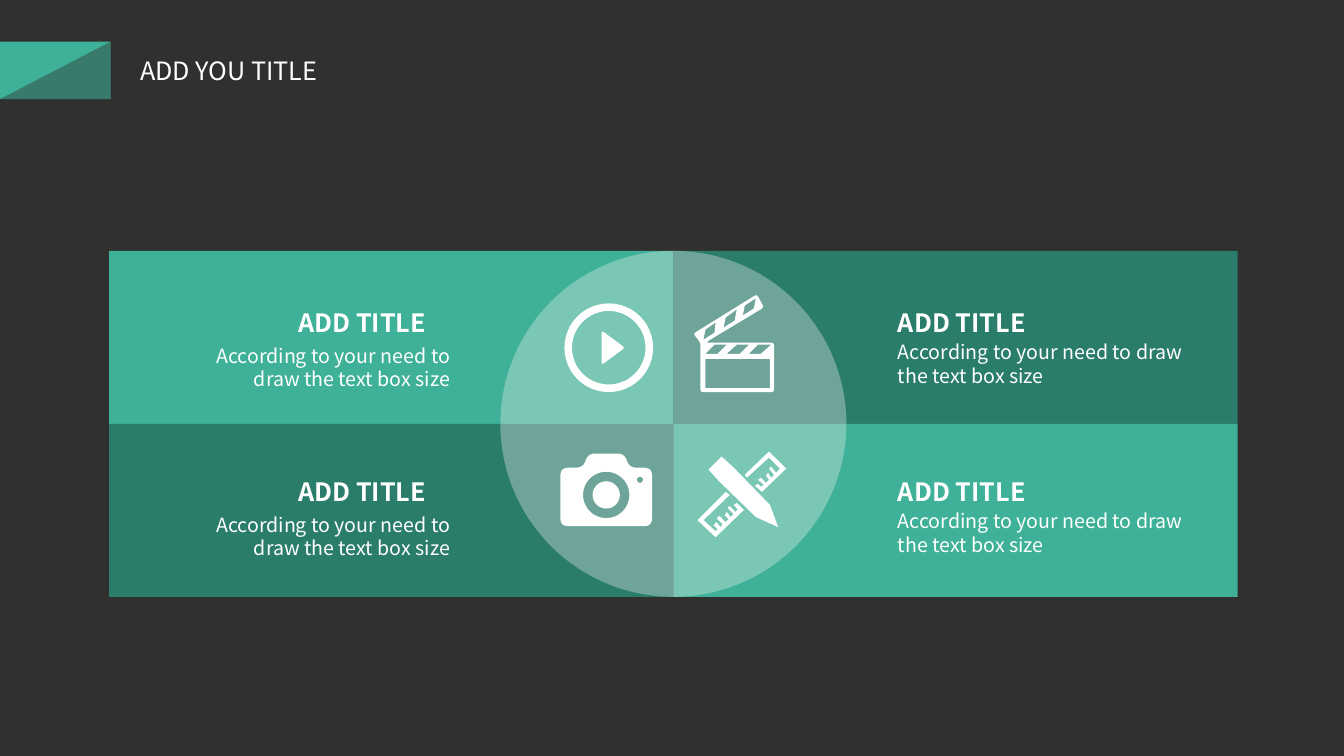
from math import cos, dist, pi, sin

from lxml.etree import SubElement
from pptx import Presentation
from pptx.dml.color import RGBColor
from pptx.enum.shapes import MSO_SHAPE
from pptx.enum.text import PP_ALIGN
from pptx.oxml.ns import qn
from pptx.util import Cm, Pt

DARK = RGBColor(0x30, 0x30, 0x2F)
MINT = RGBColor(0x3E, 0xB1, 0x98)
PINE = RGBColor(0x2B, 0x7D, 0x6B)
MIST = RGBColor(0xF2, 0xF2, 0xF2)
WHITE = RGBColor(0xFF, 0xFF, 0xFF)
FONT = "Noto Sans CJK JP"
ICON_UNIT = 0.0254

PANEL_LEFT, PANEL_TOP = 2.75, 6.32
PANEL_W, PANEL_H = 14.22, 4.36
TEXT_PITCH = 4.26
BODY = "According to your need to draw the text box size"

PLAY = [(597, 328), (620, 345), (597, 362)]
CLAPPER = [(688, 331), (751, 292), (758, 305), (703, 338), (701, 340),
           (768, 340), (768, 389), (695, 389), (695, 340)]
CLAPPER_HOLES = [
    [(743, 342), (734, 351), (721, 351), (731, 342)],
    [(739, 303), (750, 296), (748, 306), (737, 313)],
    [(720, 315), (731, 307), (729, 318), (718, 325)],
    [(698, 337), (700, 327), (710, 320), (709, 330)],
    [(709, 342), (721, 342), (712, 351), (700, 351)],
    [(755, 351), (743, 351), (752, 342), (765, 342)],
    [(700, 356), (764, 356), (764, 385), (700, 385)],
]
CAMERA = [(556, 464), (579, 464), (583, 450), (620, 450), (624, 464),
          (647, 464), (647, 522), (556, 522)]
RULER_TOP = [
    (763, 454), (774, 465), (770, 469), (765, 463), (763, 465), (768, 471),
    (765, 474), (762, 469), (760, 472), (763, 476), (760, 479), (755, 474),
    (752, 476), (758, 481), (755, 483), (752, 480), (749, 482), (756, 488),
    (780, 465), (763, 448), (739, 471), (741, 474)]
RULER_BOTTOM = [
    (728, 501), (732, 505), (730, 508), (724, 502), (722, 504), (728, 510),
    (725, 513), (721, 508), (719, 511), (723, 515), (720, 518), (714, 512),
    (711, 514), (717, 520), (715, 523), (711, 518), (708, 521), (712, 525),
    (710, 527), (698, 516), (724, 491), (720, 488), (692, 516), (710, 533),
    (738, 506), (731, 499)]
PENCIL = [(728, 464), (716, 453), (703, 466), (714, 478), (750, 513),
          (772, 523), (764, 501)]


def paint(sp, color, opacity=None):
    sp.shadow.inherit = False
    sp.fill.solid()
    sp.fill.fore_color.rgb = color
    sp.line.fill.background()
    if opacity is not None:
        clr = sp._element.spPr.find(qn("a:solidFill"))[0]
        SubElement(clr, qn("a:alpha"), val=str(opacity * 1000))


def add_preset(slide, kind, left, top, width, height, color, opacity=None):
    sp = slide.shapes.add_shape(kind, Cm(left), Cm(top), Cm(width), Cm(height))
    paint(sp, color, opacity)
    return sp


def add_text(slide, text, left, top, width, height, size, bold=False,
             align=PP_ALIGN.LEFT):
    tf = slide.shapes.add_textbox(Cm(left), Cm(top), Cm(width), Cm(height)).text_frame
    tf.word_wrap = True
    tf.margin_left = tf.margin_right = tf.margin_top = tf.margin_bottom = 0
    tf.text = text
    p = tf.paragraphs[0]
    p.alignment = align
    font = p.runs[0].font
    font.name, font.size, font.bold = FONT, Pt(size), bold
    font.color.rgb = WHITE


def circle(cx, cy, radius, steps=48):
    angles = [2 * pi * i / steps for i in range(steps)]
    return [(cx + radius * cos(a), cy + radius * sin(a)) for a in angles]


def rounded(points, radius, steps=6):
    """Replace each corner of a polygon with a quadratic curve."""
    result = []
    for i, (x, y) in enumerate(points):
        ends = []
        for nx, ny in (points[i - 1], points[(i + 1) % len(points)]):
            length = dist((x, y), (nx, ny))
            k = min(radius / length, 0.5)
            ends.append((x + (nx - x) * k, y + (ny - y) * k))
        (ax, ay), (bx, by) = ends
        for t in (j / steps for j in range(steps + 1)):
            u = 1 - t
            result.append((u * u * ax + 2 * u * t * x + t * t * bx,
                           u * u * ay + 2 * u * t * y + t * t * by))
    return result


def add_icon(slide, *contours):
    """Draw one white shape; contours, in icon units, inside another cut holes."""
    builder = None
    for contour in contours:
        start, *rest = [(Cm(x * ICON_UNIT), Cm(y * ICON_UNIT)) for x, y in contour]
        if builder is None:
            builder = slide.shapes.build_freeform(*start)
        else:
            builder.move_to(*start)
        builder.add_line_segments(rest, close=True)
    paint(builder.convert_to_shape(), WHITE)


def add_header(slide):
    flag = (0, 1.05, 2.79, 1.45)
    add_preset(slide, MSO_SHAPE.RECTANGLE, *flag, MINT)
    sp = add_preset(slide, MSO_SHAPE.RIGHT_TRIANGLE, *flag, DARK, 42)
    sp._element.spPr.xfrm.set("flipH", "1")
    add_text(slide, "ADD YOU TITLE", 3.53, 1.4, 5, 0.76, 18)


def add_panels(slide):
    for row in range(2):
        for col in range(2):
            add_preset(slide, MSO_SHAPE.RECTANGLE, PANEL_LEFT + col * PANEL_W,
                       PANEL_TOP + row * PANEL_H, PANEL_W, PANEL_H,
                       MINT if row == col else PINE)
    add_preset(slide, MSO_SHAPE.OVAL, PANEL_LEFT + PANEL_W - PANEL_H, PANEL_TOP,
               2 * PANEL_H, 2 * PANEL_H, MIST, 34)


def add_icons(slide):
    add_icon(slide, rounded(PLAY, 3))
    add_icon(slide, circle(604, 345, 44), circle(604, 345, 36.5))
    add_icon(slide, rounded(CLAPPER, 3), *CLAPPER_HOLES)
    add_icon(slide, rounded(CAMERA, 8), circle(601.5, 491, 23),
             circle(601.5, 491, 13.5), circle(635, 476, 3))
    for outline in (RULER_TOP, RULER_BOTTOM, PENCIL):
        add_icon(slide, outline)


def add_captions(slide):
    for row in range(2):
        shift = row * TEXT_PITCH
        add_text(slide, "ADD TITLE", 7.52, 7.74 + shift, 3.91, 0.76, 18, True)
        add_text(slide, BODY, 4.42, 8.66 + shift, 6.93, 1.2, 14, align=PP_ALIGN.RIGHT)
        add_text(slide, "ADD TITLE", 22.63, 7.74 + shift, 6.5, 0.76, 18, True)
        add_text(slide, BODY, 22.63, 8.57 + shift, 7.37, 1.2, 14)


def main():
    prs = Presentation()
    prs.slide_width, prs.slide_height = Cm(33.87), Cm(19.05)
    slide = prs.slides.add_slide(prs.slide_layouts[6])
    slide.background.fill.solid()
    slide.background.fill.fore_color.rgb = DARK
    add_header(slide)
    add_panels(slide)
    add_icons(slide)
    add_captions(slide)
    prs.save("out.pptx")


if __name__ == "__main__":
    main()
